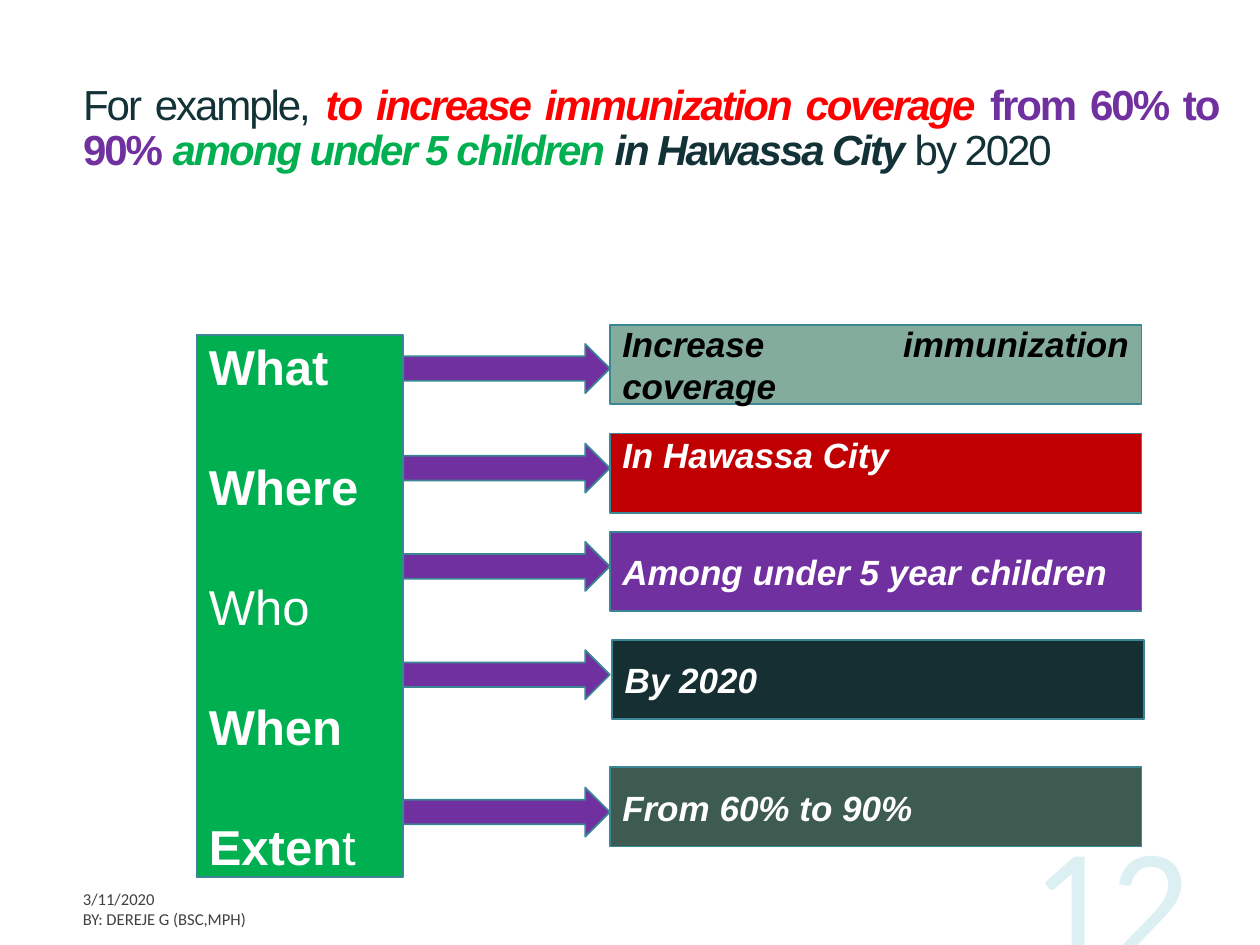
from pptx import Presentation
from pptx.dml.color import RGBColor
from pptx.enum.shapes import MSO_SHAPE
from pptx.enum.text import MSO_ANCHOR, MSO_AUTO_SIZE, PP_ALIGN
from pptx.util import Inches, Pt

RECTANGLE, ARROW = MSO_SHAPE.RECTANGLE, MSO_SHAPE.RIGHT_ARROW
TOP, MIDDLE, BOTTOM = MSO_ANCHOR.TOP, MSO_ANCHOR.MIDDLE, MSO_ANCHOR.BOTTOM
LEFT, RIGHT, JUSTIFY = PP_ALIGN.LEFT, PP_ALIGN.RIGHT, PP_ALIGN.JUSTIFY

INK = RGBColor(0x12, 0x32, 0x37)
RED = RGBColor(0xFF, 0x00, 0x00)
DARK_RED = RGBColor(0xC0, 0x00, 0x00)
PURPLE = RGBColor(0x70, 0x30, 0xA0)
GREEN = RGBColor(0x00, 0xB0, 0x50)
SAGE = RGBColor(0x84, 0xAC, 0x9D)
DARK_TEAL = RGBColor(0x16, 0x2F, 0x33)
MOSS = RGBColor(0x3D, 0x5B, 0x50)
OUTLINE = RGBColor(0x3B, 0x85, 0x94)
BLACK = RGBColor(0x00, 0x00, 0x00)
WHITE = RGBColor(0xFF, 0xFF, 0xFF)
GRAY = RGBColor(0x40, 0x40, 0x40)
PALE_BLUE = RGBColor(0xDC, 0xF0, 0xF4)

# Content: title runs are (text, color, bold, italic)
TITLE = [
    ("For example, ", INK, False, False),
    ("to increase immunization coverage ", RED, True, True),
    ("from 60% to 90% ", PURPLE, True, False),
    ("among under 5 children ", GREEN, True, True),
    ("in Hawassa City ", INK, True, True),
    ("by 2020", INK, False, False),
]
# Each question is a list of (text, bold)
QUESTIONS = [
    [("What", True)],
    [("Where", True)],
    [("Who", False)],
    [("When", True)],
    [("Exten", True), ("t", False)],
]
# text, fill, text color, anchor, left, top, arrow top
ANSWERS = [
    ("Increase immunization coverage", SAGE, BLACK, MIDDLE, 4.84, 2.58, 2.73),
    ("In Hawassa City", DARK_RED, WHITE, TOP, 4.84, 3.44, 3.52),
    ("Among under 5 year children", PURPLE, WHITE, MIDDLE, 4.84, 4.22, 4.3),
    ("By 2020", DARK_TEAL, WHITE, MIDDLE, 4.86, 5.08, 5.16),
    ("From 60% to 90%", MOSS, WHITE, MIDDLE, 4.84, 6.09, 6.25),
]
# text, box, size, color, alignment, anchor
FOOTERS = [
    ("3/11/2020", (0.56, 7.01, 3.38, 0.25), 9.5, GRAY, LEFT, MIDDLE),
    ("BY: DEREJE G (BSC,MPH)", (0.56, 7.17, 4.12, 0.25), 9.5, GRAY, LEFT, MIDDLE),
    ("12", (7.15, 6.38, 2.4, 1.53), 90, PALE_BLUE, RIGHT, BOTTOM),
]


def add_run(paragraph, text, **font_format):
    run = paragraph.add_run()
    run.text = text
    color = font_format.pop("color")
    for name, value in font_format.items():
        setattr(run.font, name, value)
    run.font.color.rgb = color
    return run


def add_block(slide, kind, box, fill):
    shape = slide.shapes.add_shape(kind, *map(Inches, box))
    shape.shadow.inherit = False
    shape.fill.solid()
    shape.fill.fore_color.rgb = fill
    shape.line.color.rgb = OUTLINE
    shape.line.width = Pt(1)
    return shape


def set_frame(frame, anchor):
    frame.word_wrap = True
    frame.auto_size = MSO_AUTO_SIZE.NONE
    frame.vertical_anchor = anchor
    return frame.paragraphs[0]


presentation = Presentation()
presentation.slide_width, presentation.slide_height = Inches(10), Inches(7.5)
slide = presentation.slides.add_slide(presentation.slide_layouts[5])

# Title
title = slide.shapes.title
title.left, title.top, title.width, title.height = map(Inches, (0.56, 0.3, 9.21, 1.45))
paragraph = set_frame(title.text_frame, MIDDLE)
paragraph.alignment = JUSTIFY
paragraph.line_spacing = 0.9
for text, color, bold, italic in TITLE:
    run = add_run(paragraph, text, name="Arial", size=Pt(24), bold=bold,
                  italic=italic, color=color)
    run.font._element.set("spc", "-120")

# Date, author and slide number
for text, box, size, color, alignment, anchor in FOOTERS:
    text_box = slide.shapes.add_textbox(*map(Inches, box))
    paragraph = set_frame(text_box.text_frame, anchor)
    paragraph.alignment = alignment
    add_run(paragraph, text, name="Calibri", size=Pt(size), color=color)

# Question column
column = add_block(slide, RECTANGLE, (1.56, 2.66, 1.64, 4.3), GREEN)
frame = column.text_frame
set_frame(frame, MIDDLE)
for index, runs in enumerate(QUESTIONS):
    paragraph = frame.add_paragraph() if index else frame.paragraphs[0]
    paragraph.alignment = JUSTIFY
    if index:
        paragraph.space_before = Pt(35)
    for text, bold in runs:
        add_run(paragraph, text, name="Arial", size=Pt(28), bold=bold, color=WHITE)

# Answers with their arrows
for text, fill, color, anchor, left, top, arrow_top in ANSWERS:
    answer = add_block(slide, RECTANGLE, (left, top, 4.22, 0.63), fill)
    answer.text_frame.margin_top = answer.text_frame.margin_bottom = 0
    paragraph = set_frame(answer.text_frame, anchor)
    paragraph.alignment = JUSTIFY
    add_run(paragraph, text, name="Arial", size=Pt(20), bold=True, italic=True,
            color=color)
    add_block(slide, ARROW, (3.2, arrow_top, 1.64, 0.39), PURPLE)

presentation.save("out.pptx")
